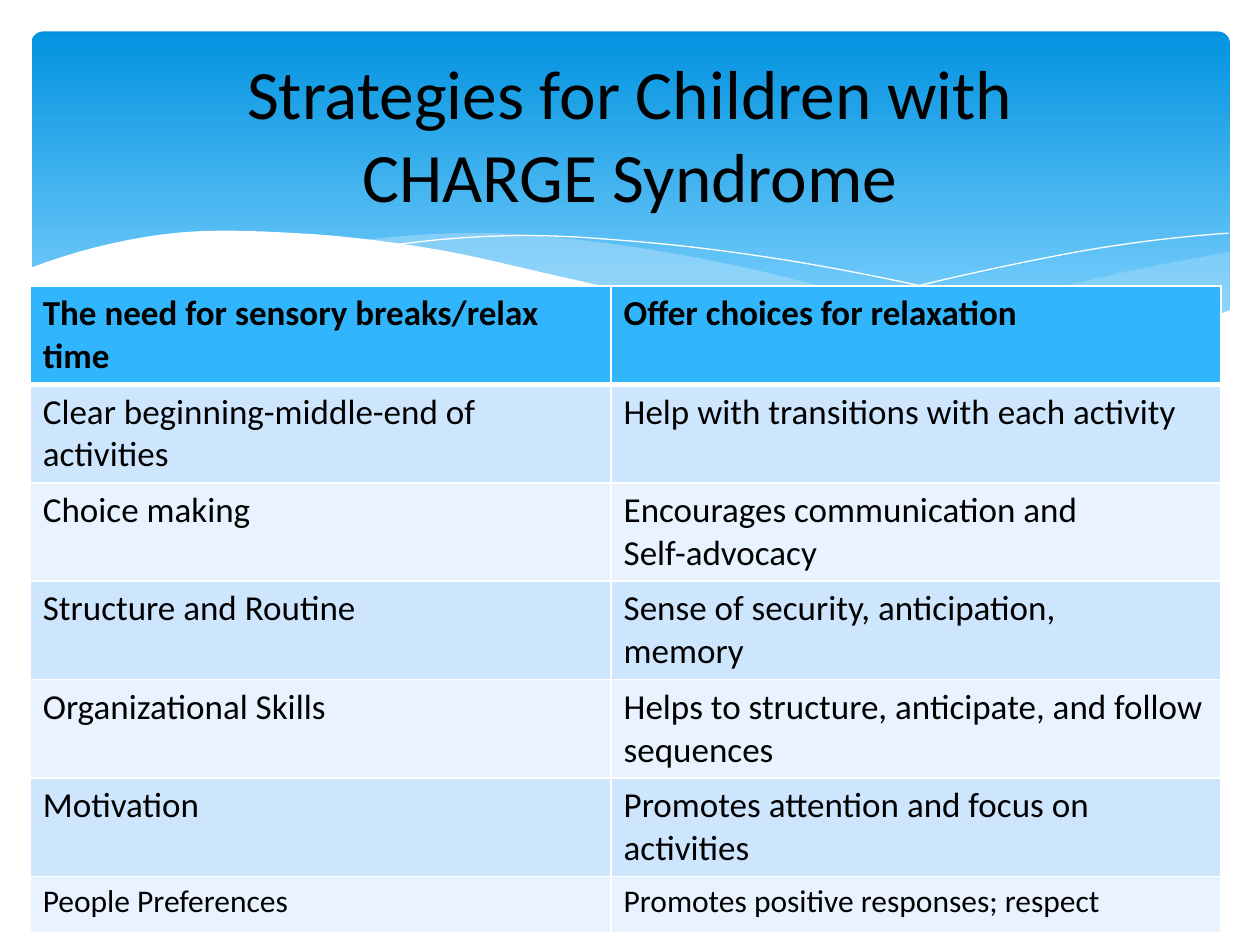
from lxml import etree
from pptx import Presentation
from pptx.dml.color import RGBColor
from pptx.enum.shapes import MSO_SHAPE
from pptx.enum.text import MSO_ANCHOR, PP_ALIGN
from pptx.oxml.ns import qn
from pptx.util import Inches, Pt

SAMPLES = 8  # straight pieces between two neighbouring heights


def color(hex_code):
    return RGBColor.from_string(hex_code)


def add_wave(edges, fill=None, opacity=100):
    """Draw smooth edges, each (first x, last x, heights at equal steps between them).

    Catmull-Rom interpolation rounds each edge. Without a fill the wave is
    an open white hairline; with one it is a closed area.
    """
    points = []
    for first_x, last_x, heights in edges:
        gaps = len(heights) - 1
        step = (last_x - first_x) / gaps
        # Extend both ends along a parabola, so that the end pieces bend too
        before = 3 * heights[0] - 3 * heights[1] + heights[2]
        after = 3 * heights[-1] - 3 * heights[-2] + heights[-3]
        knots = [before, *heights, after]
        for gap in range(gaps):
            a, b, c, d = knots[gap:gap + 4]
            for sample in range(SAMPLES):
                t = sample / SAMPLES
                y = b + t / 2 * (c - a + t * (2*a - 5*b + 4*c - d + t * (3*b - a - 3*c + d)))
                points.append((Inches(first_x + (gap + t) * step), Inches(y)))
        points.append((Inches(last_x), Inches(heights[-1])))

    builder = slide.shapes.build_freeform(*points[0])
    builder.add_line_segments(points[1:], close=fill is not None)
    wave = builder.convert_to_shape()
    wave.shadow.inherit = False
    if fill is None:
        wave.fill.background()
        wave.line.color.rgb = color("FFFFFF")
        wave.line.width = Pt(0)
        return
    wave.fill.solid()
    wave.fill.fore_color.rgb = color(fill)
    wave.line.fill.background()
    if opacity < 100:
        tint = wave._element.spPr.find(qn("a:solidFill"))[0]
        etree.SubElement(tint, qn("a:alpha"), val=str(opacity * 1000))


prs = Presentation()
prs.slide_width, prs.slide_height = Inches(10), Inches(7.5)
slide = prs.slides.add_slide(prs.slide_layouts[6])

# Blue header
header = slide.shapes.add_shape(
    MSO_SHAPE.ROUNDED_RECTANGLE, Inches(0.25), Inches(0.25), Inches(9.51), Inches(2.7))
header.adjustments[0] = 0.034
header.shadow.inherit = False
header.line.fill.background()
header.fill.gradient()
header.fill.gradient_angle = 270
for stop, (position, shade) in zip(header.fill.gradient_stops, [(0, "0293E0"), (0.9, "83D3FE")]):
    stop.position = position
    stop.color.rgb = color(shade)

# Waves, from back to front: a closed one runs along one edge and returns along the other
right_wave = [
    (9.76, 6.61, [2, 2.15, 2.33, 2.5, 2.65]),
    (6.61, 9.76, [2.65, 2.75, 2.78, 2.7, 2.47]),
]
middle_wave = [
    (8.93, 2.86, [2.73, 2.57, 2.37, 2.12, 1.94, 1.85, 1.91]),
    (2.86, 8.93, [1.91, 2.08, 2.31, 2.53, 2.69, 2.78, 2.73]),
]
long_crest = [(3.09, 9.07, [1.95, 1.87, 1.92, 2.04, 2.22, 2.45, 2.72])]
right_crest = [(6.13, 9.75, [2.57, 2.33, 2.12, 1.95, 1.85])]
white_wave = [
    (9.77, 0.23, [2.46, 2.73, 2.75, 2.64, 2.44, 2.2, 1.97, 1.85, 1.86, 2.13]),
    (0.23, 9.77, [3.29, 3.29, 3.29]),
]
add_wave(right_wave, "C6E7FC", 29)
add_wave(middle_wave, "C6E7FC", 40)
add_wave(long_crest)
add_wave(right_crest)
add_wave(white_wave, "FFFFFF")

# Strategies table
strategies = [
    ("The need for sensory breaks/relax time", "Offer choices for relaxation"),
    ("Clear beginning-middle-end of activities", "Help with transitions with each activity"),
    ("Choice making", "Encourages communication and\nSelf-advocacy"),
    ("Structure and Routine", "Sense of security, anticipation,\nmemory"),
    ("Organizational Skills", "Helps to structure, anticipate, and follow sequences"),
    ("Motivation", "Promotes attention and focus on activities"),
    ("People Preferences", "Promotes positive responses; respect"),
]
last = len(strategies) - 1
table = slide.shapes.add_table(
    len(strategies), 2, Inches(0.24), Inches(2.27), Inches(9.45), Inches(5.13)).table
table.columns[0].width, table.columns[1].width = Inches(4.61), Inches(4.84)
for row, texts in enumerate(strategies):
    table.rows[row].height = Inches(0.45 if row == last else 0.78)
    band = "CEE5FE" if row % 2 else "E8F3FF"
    for column, text in enumerate(texts):
        cell = table.cell(row, column)
        borders = cell._tc.get_or_add_tcPr()
        for side in ("lnL", "lnR", "lnT", "lnB"):
            under_heading = (row, side) in [(0, "lnB"), (1, "lnT")]
            border = etree.SubElement(
                borders, qn(f"a:{side}"), w=str(Pt(3 if under_heading else 1)))
            border_fill = etree.SubElement(border, qn("a:solidFill"))
            etree.SubElement(border_fill, qn("a:srgbClr"), val="FFFFFF")
        cell.fill.solid()
        cell.fill.fore_color.rgb = color("31B6FD" if row == 0 else band)
        cell.text = text
        for paragraph in cell.text_frame.paragraphs:
            paragraph.font.name = "Calibri"
            paragraph.font.size = Pt(18 if row == last else 20)
            paragraph.font.bold = row == 0
            paragraph.font.color.rgb = color("000000")

# Title
title = slide.shapes.add_textbox(Inches(0.5), Inches(0.37), Inches(9), Inches(1.37)).text_frame
title.word_wrap = True
title.vertical_anchor = MSO_ANCHOR.MIDDLE
heading = title.paragraphs[0]
heading.text = "Strategies for Children with\vCHARGE Syndrome"
heading.alignment = PP_ALIGN.CENTER
heading.font.name = "Calibri"
heading.font.size = Pt(39.6)
heading.font.color.rgb = color("000000")

prs.save("out.pptx")
